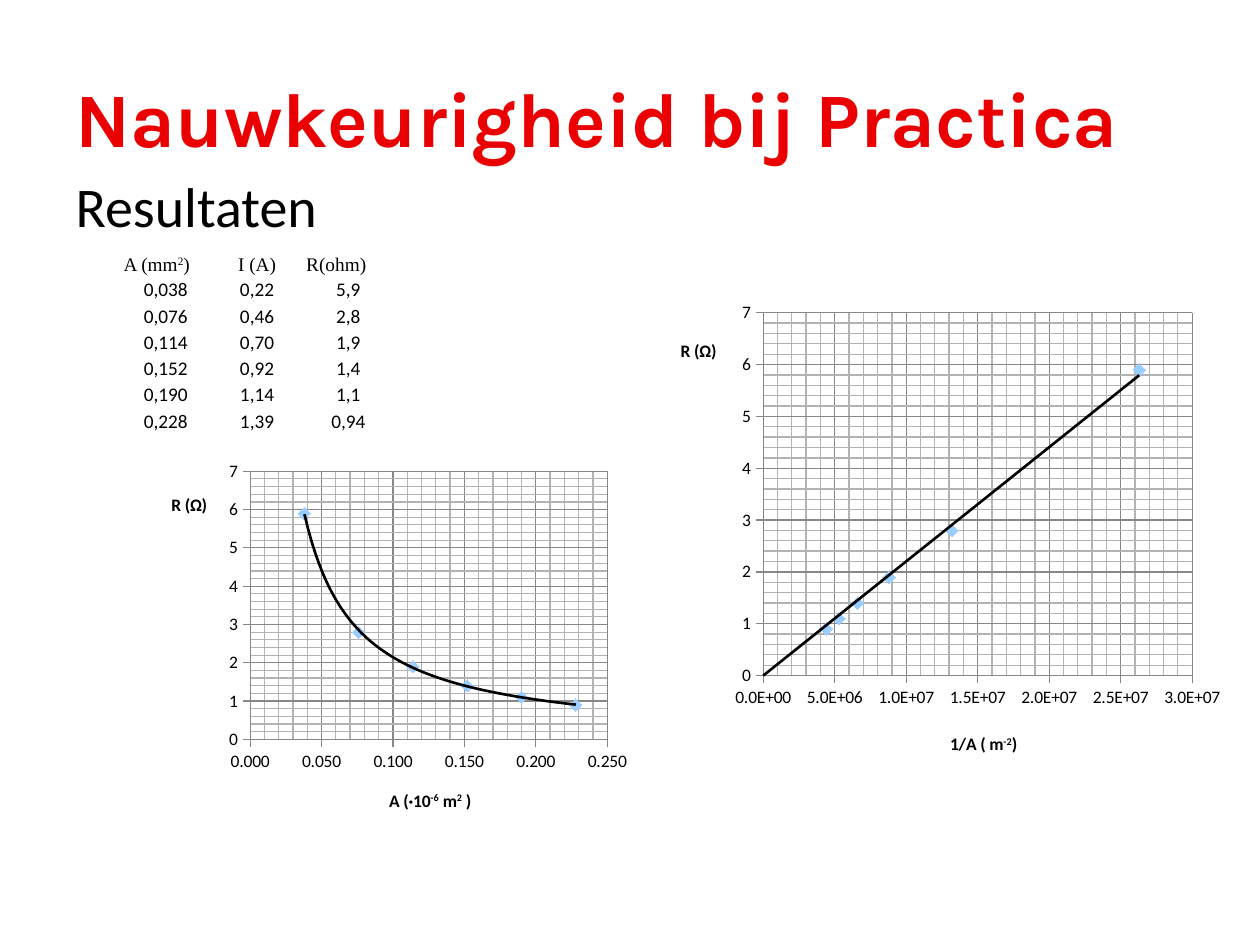
from dataclasses import dataclass

from lxml.etree import SubElement
from pptx import Presentation
from pptx.chart.data import XyChartData
from pptx.dml.color import RGBColor
from pptx.enum.chart import XL_CHART_TYPE, XL_MARKER_STYLE, XL_TICK_MARK
from pptx.enum.text import MSO_ANCHOR, PP_ALIGN
from pptx.oxml import parse_xml
from pptx.oxml.ns import nsdecls, qn
from pptx.util import Pt


@dataclass(frozen=True)
class Theme:
    red: str = "EA0000"
    black: str = "000000"
    marker: str = "99CCFF"
    major: str = "878787"
    minor: str = "B3B3B3"
    heading: str = "Karla"
    body: str = "Calibri"
    serif: str = "Times New Roman"
    title_size: float = 44
    body_size: float = 32
    table_size: float = 11
    chart_size: float = 10


class Deck:
    def __init__(self, theme):
        self.theme = theme
        self.prs = Presentation()
        self.prs.slide_width, self.prs.slide_height = Pt(720), Pt(540)
        self.s = self.prs.slides.add_slide(self.prs.slide_layouts[1])

    def style(self, font, name, size, color, bold=False):
        font.name, font.size, font.bold = name, Pt(size), bold
        font.color.rgb = RGBColor.from_string(color)

    def rich(self, p, text, *style):
        for i, part in enumerate(text.split("^")):
            r = p.add_run()
            r.text = part
            self.style(r.font, *style)
            if i % 2:
                r.font._element.set("baseline", "30000")

    def place(self, sp, left, top, width, height):
        sp.left, sp.top, sp.width, sp.height = map(Pt, (left, top, width, height))

    def title(self, text, *box):
        sp = self.s.shapes.title
        self.place(sp, *box)
        tf = sp.text_frame
        tf.text = text
        tf.vertical_anchor = MSO_ANCHOR.MIDDLE
        p = tf.paragraphs[0]
        p.alignment = PP_ALIGN.LEFT
        t = self.theme
        self.style(p.runs[0].font, t.heading, t.title_size, t.red, True)

    def body(self, text, *box):
        sp = self.s.placeholders[1]
        self.place(sp, *box)
        sp.text_frame.text = text
        p = sp.text_frame.paragraphs[0]
        pPr = p._p.get_or_add_pPr()
        pPr.set("marL", str(Pt(27)))
        pPr.set("indent", str(-Pt(27)))
        SubElement(pPr, qn("a:buNone"))
        p.space_before = Pt(0)
        t = self.theme
        self.style(p.runs[0].font, t.body, t.body_size, t.black)

    def table(self, rows, left, top, widths, heights):
        t = self.theme
        table = self.s.shapes.add_table(
            len(rows), len(widths), Pt(left), Pt(top),
            Pt(sum(widths)), Pt(sum(heights))).table
        table.first_row = table.horz_banding = False
        for col, width in zip(table.columns, widths):
            col.width = Pt(width)
        for i, (row, height) in enumerate(zip(rows, heights)):
            table.rows[i].height = Pt(height)
            for j, text in enumerate(row):
                cell = table.cell(i, j)
                cell.fill.background()
                cell.margin_left = cell.margin_right = 0
                cell.margin_top = cell.margin_bottom = 0
                cell.vertical_anchor = MSO_ANCHOR.BOTTOM
                p = cell.text_frame.paragraphs[0]
                p.alignment = PP_ALIGN.CENTER if i or j == 1 else PP_ALIGN.LEFT
                self.rich(p, text, t.body if i else t.serif, t.table_size, t.black)

    def layout(self, x, y, w=None, h=None):
        sizes = {"xMode": "edge", "yMode": "edge", "x": x, "y": y, "w": w, "h": h}
        if w:
            sizes = {"layoutTarget": "inner", **sizes}
        tags = "".join(f'<c:{k} val="{v}"/>' for k, v in sizes.items() if v is not None)
        return parse_xml(f'<c:layout {nsdecls("c")}><c:manualLayout>{tags}'
                         "</c:manualLayout></c:layout>")

    def line_xml(self, color, width):
        return parse_xml(
            f'<c:spPr {nsdecls("c", "a")}><a:ln w="{Pt(width)}"><a:solidFill>'
            f'<a:srgbClr val="{color}"/></a:solidFill></a:ln></c:spPr>')

    def axis(self, axis, title, spot, top, major, fmt):
        t = self.theme
        axis.minimum_scale, axis.maximum_scale = 0, top
        axis.major_unit, axis.minor_unit = major, major / 5
        axis.major_tick_mark, axis.minor_tick_mark = XL_TICK_MARK.CROSS, XL_TICK_MARK.NONE
        axis.has_major_gridlines = axis.has_minor_gridlines = True
        for line in (axis.major_gridlines.format.line, axis.format.line):
            line.color.rgb = RGBColor.from_string(t.major)
            line.width = Pt(0.75)
        axis._element.find(qn("c:minorGridlines")).append(self.line_xml(t.minor, 0.75))
        axis.tick_labels.number_format = fmt
        axis.tick_labels.number_format_is_linked = False
        tf = axis.axis_title.text_frame
        self.rich(tf.paragraphs[0], title, t.body, t.chart_size, t.black, True)
        el = axis.axis_title._element
        body = el.find(".//" + qn("a:bodyPr"))
        body.set("rot", "0")
        body.set("vert", "horz")
        for old in el.findall(qn("c:layout")):
            el.remove(old)
        el.find(qn("c:tx")).addnext(self.layout(*spot))

    def chart(self, box, xs, ys, plot, x_axis, y_axis, trend, extra=""):
        t = self.theme
        data = XyChartData()
        series = data.add_series("Series 1")
        for x, y in zip(xs, ys):
            series.add_data_point(x, y)
        chart = self.s.shapes.add_chart(
            XL_CHART_TYPE.XY_SCATTER, *map(Pt, box), data).chart
        chart.has_legend = chart.has_title = False
        self.style(chart.font, t.body, t.chart_size, t.black)
        self.axis(chart.category_axis, *x_axis)
        self.axis(chart.value_axis, *y_axis)
        chart.plots[0].vary_by_categories = False
        ser = chart.plots[0].series[0]
        ser.format.line.fill.background()
        ser.marker.style, ser.marker.size = XL_MARKER_STYLE.DIAMOND, 7
        ser.marker.format.fill.solid()
        ser.marker.format.fill.fore_color.rgb = RGBColor.from_string(t.marker)
        ser.marker.format.line.fill.background()
        trendline = parse_xml(
            f'<c:trendline {nsdecls("c")}><c:trendlineType val="{trend}"/>{extra}'
            '<c:dispRSqr val="0"/><c:dispEq val="0"/></c:trendline>')
        trendline.insert(0, self.line_xml(t.black, 1.5))
        ser._element.find(qn("c:xVal")).addprevious(trendline)
        area = chart._chartSpace.find(".//" + qn("c:plotArea"))
        for old in area.findall(qn("c:layout")):
            area.remove(old)
        area.insert(0, self.layout(*plot))


def main():
    deck = Deck(Theme())
    deck.title("Nauwkeurigheid bij Practica", 36, 21.6, 648, 90)
    deck.body("Resultaten", 36, 94.5, 648, 388)
    resistance = [5.9, 2.8, 1.9, 1.4, 1.1, 0.9]
    deck.chart(
        (377.3, 167.8, 326.9, 272.9),
        [26300000, 13200000, 8800000, 6600000, 5300000, 4400000], resistance,
        (0.18, 0.04, 0.75, 0.76),
        ("1/A ( m^-2^)", (0.5, 0.91), 30000000, 5000000, "0.0E+00"),
        ("R (Ω)", (0.03, 0.09), 7, 1, "General"),
        "linear", '<c:backward val="4400000"/><c:intercept val="0"/>')
    deck.chart(
        (87.8, 258.5, 275.8, 216),
        [0.038, 0.076, 0.114, 0.152, 0.19, 0.228], resistance,
        (0.2, 0.05, 0.74, 0.71),
        ("A (·10^-6^ m^2^ )", (0.48, 0.88), 0.25, 0.05, "0.000"),
        ("R (Ω)", (0.03, 0.1), 7, 1, "General"),
        "power")
    deck.table(
        [("A (mm^2^)", "I (A)", "R(ohm)"),
         ("0,038", "0,22", "5,9"),
         ("0,076", "0,46", "2,8"),
         ("0,114", "0,70", "1,9"),
         ("0,152", "0,92", "1,4"),
         ("0,190", "1,14", "1,1"),
         ("0,228", "1,39", "0,94")],
        70.6, 139.7, [48.2, 56.2, 48.2], [18] + [15] * 6)
    deck.prs.save("out.pptx")


if __name__ == "__main__":
    main()
